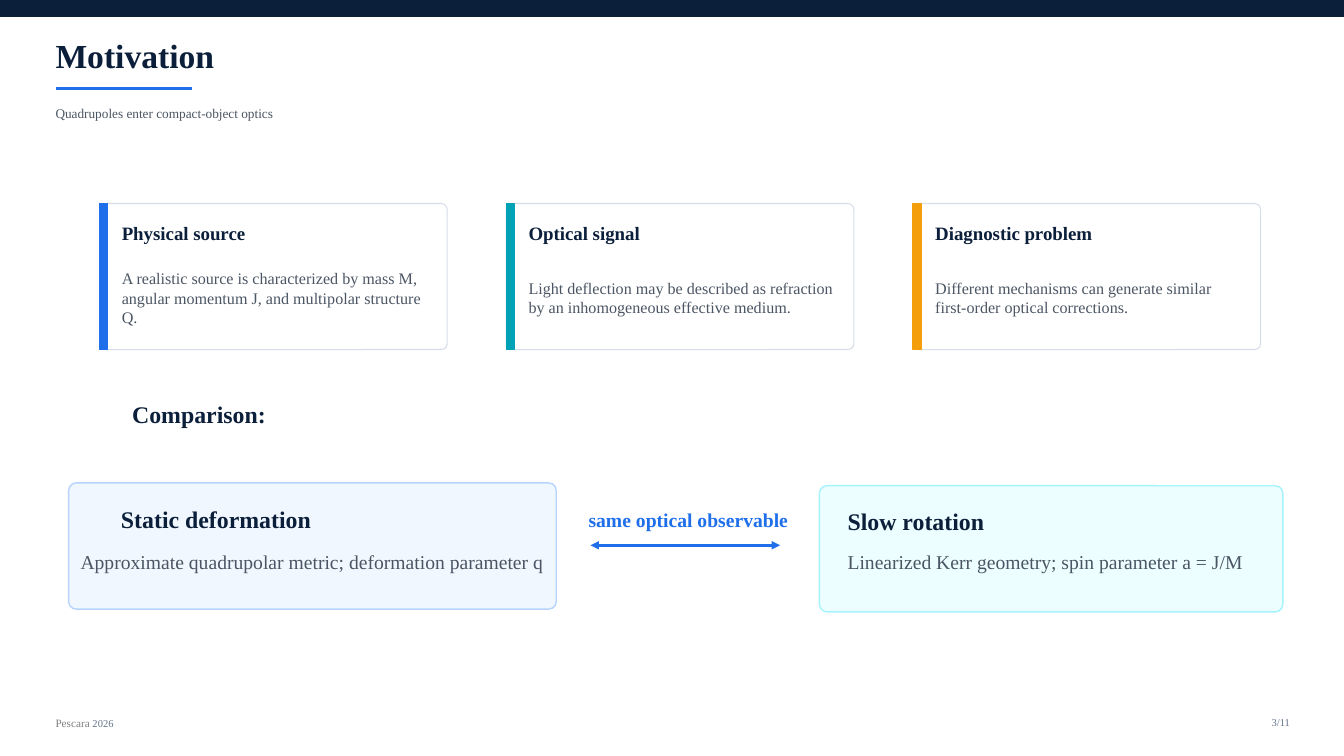
import pptx
import pptx.dml.color
import pptx.enum.shapes
import pptx.enum.text
import pptx.oxml.ns
import pptx.oxml.xmlchemy
import pptx.util

Cm = pptx.util.Cm
Pt = pptx.util.Pt
Shape = pptx.enum.shapes.MSO_SHAPE
Align = pptx.enum.text.PP_ALIGN

NAVY, BLUE, TEAL, AMBER = "0B1F3A", "1F6FEB", "00A3B5", "F59E0B"
WHITE, GRAY, SLATE, BORDER = "FFFFFF", "4B5563", "64748B", "D8DEE9"
MARGIN = 1.4
FOOTER_TOP = 17.98


def rgb(value):
    return pptx.dml.color.RGBColor.from_string(value)


def drawing_element(tag, **attributes):
    element = pptx.oxml.xmlchemy.OxmlElement(tag)
    for name, value in attributes.items():
        element.set(name, value)
    return element


class Deck:
    font = "Times New Roman"

    def __init__(self, width, height):
        self.presentation = pptx.Presentation()
        self.presentation.slide_width = Cm(width)
        self.presentation.slide_height = Cm(height)
        blank = self.presentation.slide_layouts[6]
        self.slide = self.presentation.slides.add_slide(blank)

    def box(self, left, top, width, height, fill, line, line_width=1.0, radius=None):
        """Draw a rectangle, rounded when a radius ratio is given."""
        kind = Shape.RECTANGLE if radius is None else Shape.ROUNDED_RECTANGLE
        shape = self.slide.shapes.add_shape(kind, Cm(left), Cm(top), Cm(width), Cm(height))
        if radius is not None:
            shape.adjustments[0] = radius
        shape.shadow.inherit = False
        shape.fill.solid()
        shape.fill.fore_color.rgb = rgb(fill)
        shape.line.color.rgb = rgb(line)
        shape.line.width = Pt(line_width)

    def text(self, left, top, width, height, *runs, bold=False, align=Align.LEFT):
        """Write one paragraph; each run is (words, size, color)."""
        frame = self.slide.shapes.add_textbox(
            Cm(left), Cm(top), Cm(width), Cm(height)).text_frame
        frame.word_wrap = True
        frame.vertical_anchor = pptx.enum.text.MSO_ANCHOR.MIDDLE
        frame.margin_left = frame.margin_right = Cm(0)
        frame.margin_top = frame.margin_bottom = Cm(0)
        paragraph = frame.paragraphs[0]
        paragraph.alignment = align
        for words, size, color in runs:
            run = paragraph.add_run()
            run.text = words
            run.font.name = self.font
            run.font.size = Pt(size)
            run.font.bold = bold
            run.font.color.rgb = rgb(color)

    def horizontal_line(self, start, end, top, color, arrows=False):
        connector = self.slide.shapes.add_connector(
            pptx.enum.shapes.MSO_CONNECTOR.STRAIGHT, Cm(start), Cm(top), Cm(end), Cm(top))
        connector.line.color.rgb = rgb(color)
        connector.line.width = Pt(2)
        properties = connector._element.find(pptx.oxml.ns.qn("p:spPr"))
        properties.append(drawing_element("a:effectLst"))
        if arrows:
            outline = properties.find(pptx.oxml.ns.qn("a:ln"))
            for tag in ("a:headEnd", "a:tailEnd"):
                outline.append(drawing_element(tag, type="triangle"))

    def card(self, left, accent, heading, body):
        top, height = 5.13, 3.68
        self.box(left, top, 8.76, height, WHITE, BORDER, 0.8, radius=0.04)
        self.box(left, top, 0.2, height, accent, accent)
        text_left = left + 0.56
        self.text(text_left, top + 0.41, 7.87, 0.64, (heading, 13.5, NAVY), bold=True)
        self.text(text_left, top + 1.32, 7.8, 2.11, (body, 11.5, GRAY))

    def panel(self, left, top, width, fill, line, heading, heading_left, body, body_area):
        self.box(left, top, width, 3.18, fill, line, radius=0.06)
        self.text(heading_left, top + 0.58, 6.1, 0.64, (heading, 17, NAVY), bold=True)
        self.text(*body_area, (body, 14, GRAY))


def main():
    deck = Deck(33.87, 19.05)

    deck.box(0, 0, 33.87, 0.41, NAVY, NAVY)
    deck.text(MARGIN, 0.86, 18.8, 1.07, ("Motivation", 24, NAVY), bold=True)
    deck.horizontal_line(MARGIN, 4.83, 2.24, BLUE)
    deck.text(MARGIN, 2.62, 19.05, 0.46,
              ("Quadrupoles enter compact-object optics", 9.5, GRAY))

    cards = [
        (BLUE, "Physical source", "A realistic source is characterized by mass M, "
         "angular momentum J, and multipolar structure Q."),
        (TEAL, "Optical signal", "Light deflection may be described as refraction "
         "by an inhomogeneous effective medium."),
        (AMBER, "Diagnostic problem",
         "Different mechanisms can generate similar first-order optical corrections."),
    ]
    for column, (accent, heading, body) in enumerate(cards):
        deck.card(2.51 + 10.25 * column, accent, heading, body)

    deck.text(3.33, 10.08, 8.64, 0.71, ("Comparison:", 17, NAVY), bold=True)
    deck.panel(1.73, 12.17, 12.29, "F0F7FF", "B6D4FE", "Static deformation", 3.05,
               "Approximate quadrupolar metric; deformation parameter q",
               (2.03, 13.92, 12.83, 0.46))
    deck.panel(20.65, 12.24, 11.68, "ECFEFF", "A5F3FC", "Slow rotation", 21.36,
               "Linearized Kerr geometry; spin parameter a = J/M",
               (21.36, 13.94, 10.46, 0.43))
    deck.horizontal_line(14.88, 19.66, 13.74, BLUE, arrows=True)
    deck.text(14.53, 12.8, 5.64, 0.58, ("same optical observable", 14, BLUE),
              bold=True, align=Align.CENTER)

    deck.text(31.37, FOOTER_TOP, 1.14, 0.46, ("3/11", 7.5, SLATE), align=Align.RIGHT)
    deck.text(MARGIN, FOOTER_TOP, 14.48, 0.46,
              ("Pescara", 8, "808080"), (" 2026", 7.5, SLATE))

    deck.presentation.save("out.pptx")


if __name__ == "__main__":
    main()
